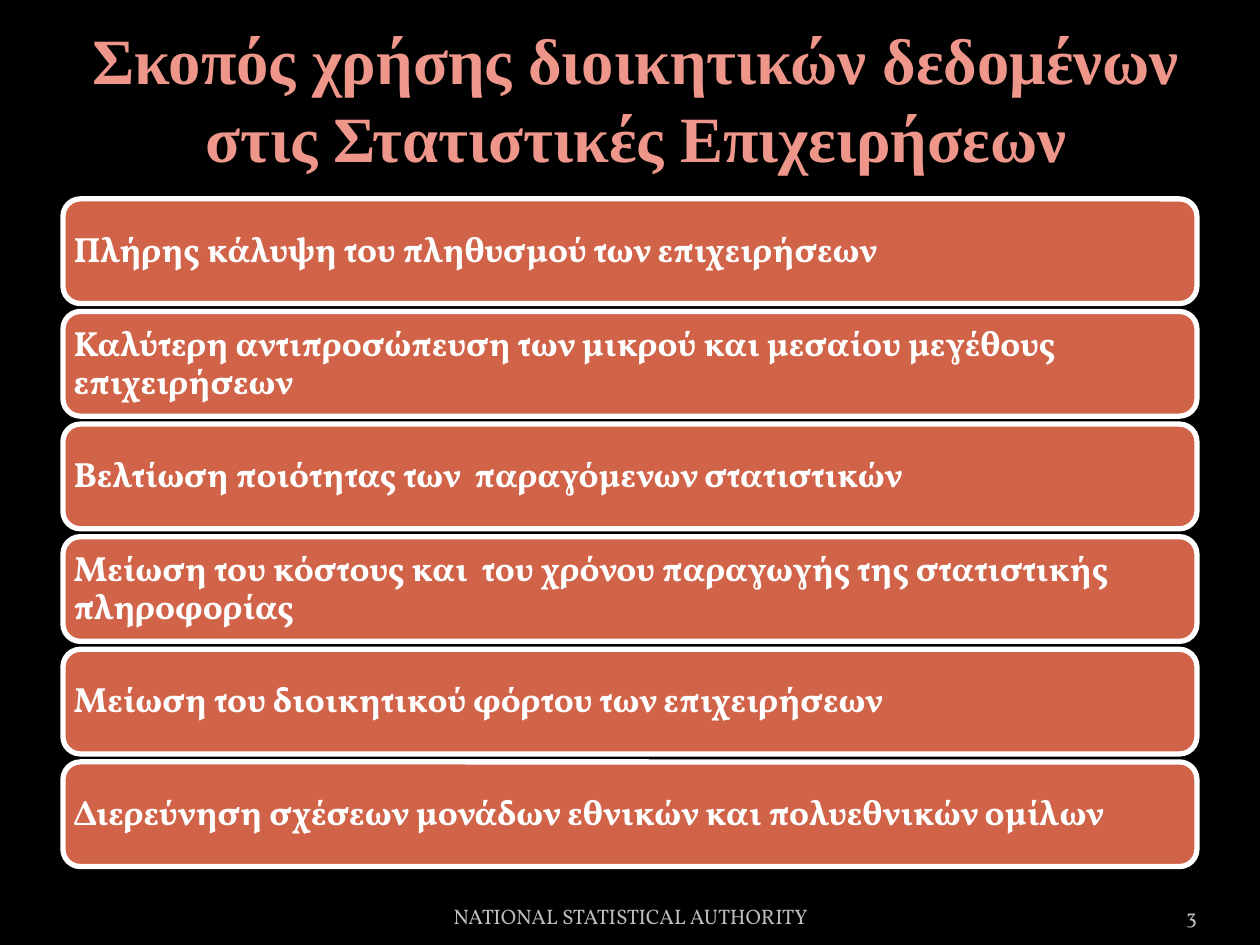
import pptx
import pptx.util
import pptx.dml.color
import pptx.enum.shapes
import pptx.enum.text

Cm = pptx.util.Cm
Pt = pptx.util.Pt
RGBColor = pptx.dml.color.RGBColor
Align = pptx.enum.text.PP_ALIGN
Anchor = pptx.enum.text.MSO_ANCHOR

BLACK = RGBColor(0x00, 0x00, 0x00)
WHITE = RGBColor(0xFF, 0xFF, 0xFF)
SALMON = RGBColor(0xEE, 0x96, 0x8A)
BRICK = RGBColor(0xD1, 0x63, 0x49)
GREY = RGBColor(0xBD, 0xBD, 0xBD)

TITLE = "Σκοπός χρήσης διοικητικών δεδομένων στις Στατιστικές Επιχειρήσεων"
PURPOSES = [
    "Πλήρης κάλυψη του πληθυσμού των επιχειρήσεων",
    "Καλύτερη αντιπροσώπευση των μικρού και μεσαίου μεγέθους επιχειρήσεων",
    "Βελτίωση ποιότητας των  παραγόμενων στατιστικών",
    "Μείωση του κόστους και  του χρόνου παραγωγής της στατιστικής πληροφορίας",
    "Μείωση του διοικητικού φόρτου των επιχειρήσεων",
    "Διερεύνηση σχέσεων μονάδων εθνικών και πολυεθνικών ομίλων",
]
BAR_LEFT, BAR_TOP, BAR_WIDTH, BAR_HEIGHT, BAR_PITCH = 1.27, 4.01, 22.86, 2.11, 2.27


class SlideBuilder:
    """Holds the style and the current slide, and adds each kind of element."""

    body_font = "Vollkorn"
    title_font = "Times New Roman"

    def __init__(self, deck):
        self.slide = deck.slides.add_slide(deck.slide_layouts[5])
        fill = self.slide.background.fill
        fill.solid()
        fill.fore_color.rgb = BLACK

    def set_text(self, box, text, font, size, color, align, anchor, bold=False):
        frame = box.text_frame
        frame.word_wrap = True
        frame.vertical_anchor = anchor
        para = frame.paragraphs[0]
        para.text = text
        para.alignment = align
        para.font.name = font
        para.font.size = Pt(size)
        para.font.bold = bold
        para.font.color.rgb = color
        return para

    def title(self, text, left, top, width, height):
        box = self.slide.shapes.title
        box.left, box.top, box.width, box.height = map(Cm, (left, top, width, height))
        box.text_frame.auto_size = pptx.enum.text.MSO_AUTO_SIZE.NONE
        self.set_text(box, text, self.title_font, 36.9, SALMON,
                      Align.CENTER, Anchor.MIDDLE, bold=True)

    def bar(self, text, left, top, width, height):
        box = self.slide.shapes.add_shape(
            pptx.enum.shapes.MSO_SHAPE.ROUNDED_RECTANGLE,
            Cm(left), Cm(top), Cm(width), Cm(height))
        box.shadow.inherit = False
        box.fill.solid()
        box.fill.fore_color.rgb = BRICK
        box.line.color.rgb = WHITE
        box.line.width = Pt(3)
        frame = box.text_frame
        frame.margin_left = frame.margin_right = Cm(0.11)
        frame.margin_top = frame.margin_bottom = Cm(0.11)
        para = self.set_text(box, text, self.body_font, 20, WHITE,
                             Align.LEFT, Anchor.MIDDLE, bold=True)
        para.line_spacing = 0.9

    def footer(self, text, left, width, align, margin):
        box = self.slide.shapes.add_textbox(Cm(left), Cm(17.83), Cm(width), Cm(1.02))
        box.text_frame.margin_left = box.text_frame.margin_right = Cm(margin)
        self.set_text(box, text, self.body_font, 12, GREY, align, Anchor.BOTTOM)


def main():
    deck = pptx.Presentation()
    deck.slide_width, deck.slide_height = Cm(25.4), Cm(19.05)
    builder = SlideBuilder(deck)
    builder.title(TITLE, 1.4, 0.58, 22.86, 2.77)
    for index, purpose in enumerate(PURPOSES):
        builder.bar(purpose, BAR_LEFT, BAR_TOP + index * BAR_PITCH, BAR_WIDTH, BAR_HEIGHT)
    builder.footer("NATIONAL STATISTICAL AUTHORITY", 8.69, 8.05, Align.CENTER, 0.25)
    builder.footer("3", 22.02, 2.11, Align.RIGHT, 0)
    deck.save("out.pptx")


if __name__ == "__main__":
    main()
